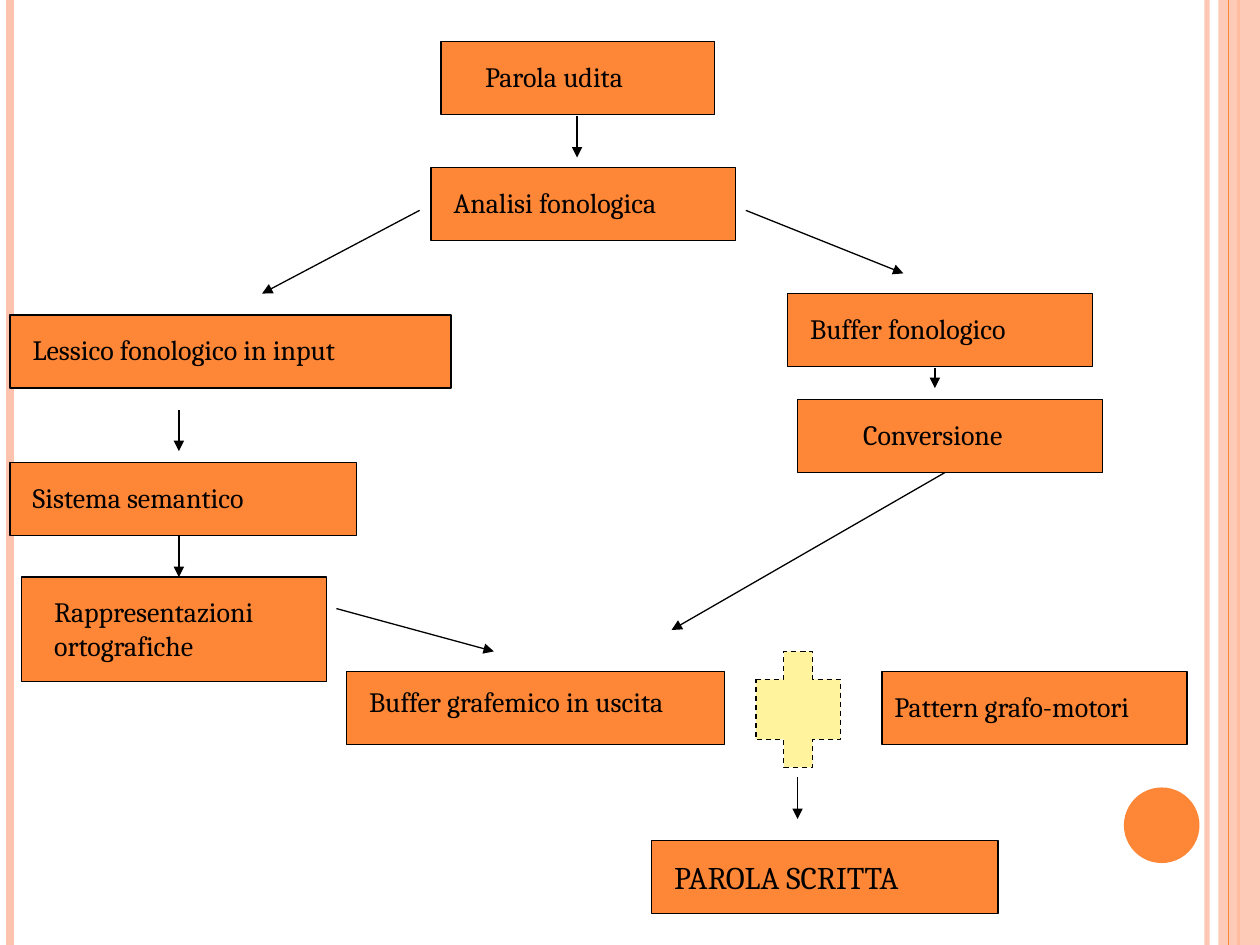
"""Build a flow chart of the steps from a heard word to a written word."""
from typing import NamedTuple

from lxml import etree
from pptx import Presentation
from pptx.dml.color import RGBColor
from pptx.enum.dml import MSO_LINE
from pptx.enum.shapes import MSO_CONNECTOR, MSO_SHAPE
from pptx.enum.text import MSO_ANCHOR, PP_ALIGN
from pptx.oxml.ns import qn
from pptx.util import Inches, Pt

RECTANGLE, OVAL, CROSS = MSO_SHAPE.RECTANGLE, MSO_SHAPE.OVAL, MSO_SHAPE.CROSS
STRAIGHT, DASH = MSO_CONNECTOR.STRAIGHT, MSO_LINE.DASH
TOP, LEFT = MSO_ANCHOR.TOP, PP_ALIGN.LEFT
ORANGE, PEACH, YELLOW, BLACK = "FE8637", "FEC3AE", "FFF39D", "000000"
FONT = "Cambria"
SLIDE_WIDTH, SLIDE_HEIGHT = 10, 7.5
STEP_HEIGHT = 0.58


class Step(NamedTuple):
    text: str
    left: float
    top: float
    width: float = 2.42
    height: float = STEP_HEIGHT
    indent: float = 0.18
    inset_top: float = 0.14
    size: int = 16


class Arrow(NamedTuple):
    start: tuple[float, float]
    end: tuple[float, float]


class Stripe(NamedTuple):
    x: float
    color: str
    weight: float
    opacity: int = 100


STEPS = [
    Step("Parola udita", 3.5, 0.33, width=2.17, indent=0.35),
    Step("Analisi fonologica", 3.42, 1.33),
    Step("Buffer fonologico", 6.25, 2.33),
    Step("Conversione", 6.33, 3.17, indent=0.52),
    Step("Buffer grafemico in uscita", 2.75, 5.33, width=3, inset_top=0.1),
    Step("PAROLA SCRITTA", 5.17, 6.67, width=2.75, size=18),
    Step("Lessico fonologico in input", 0.08, 2.5, width=3.5),
    Step("Sistema semantico", 0.08, 3.67, width=2.75),
    Step("Rappresentazioni ortografiche", 0.17, 4.58, height=0.83, indent=0.26),
    Step("Pattern grafo-motori", 7, 5.33, indent=0.1),
]
ARROWS = [
    Arrow((4.58, 0.92), (4.58, 1.25)),
    Arrow((5.92, 1.67), (7.17, 2.17)),
    Arrow((7.42, 2.92), (7.42, 3.08)),
    Arrow((7.5, 3.75), (5.33, 5)),
    Arrow((6.33, 6.17), (6.33, 6.5)),
    Arrow((3.33, 1.67), (2.08, 2.33)),
    Arrow((1.42, 3.25), (1.42, 3.58)),
    Arrow((1.42, 4.25), (1.42, 4.58)),
    Arrow((2.67, 4.83), (3.92, 5.17)),
]
OUTER_STRIPES = [
    Stripe(9.58, PEACH, 3, opacity=93),
    Stripe(0.08, PEACH, 4.5),
    Stripe(9.83, ORANGE, 1.5),
]
INNER_STRIPE = Stripe(9.75, ORANGE, 0.75)


def paint(color_format, color: str, opacity: int = 100) -> None:
    """Set a colour, and its opacity in percent when it is not full."""
    color_format.rgb = RGBColor.from_string(color)
    if opacity < 100:
        for element in color_format._xFill.iter(qn("a:srgbClr")):
            etree.SubElement(element, qn("a:alpha"), val=str(opacity * 1000))


def add_box(page, kind, left: float, top: float, width: float, height: float,
            fill: str, opacity: int = 100, outline: str | None = None):
    """Add a filled shape without a shadow, outlined on request."""
    box = page.shapes.add_shape(
        kind, Inches(left), Inches(top), Inches(width), Inches(height))
    box.shadow.inherit = False
    box.fill.solid()
    paint(box.fill.fore_color, fill, opacity)
    if outline:
        paint(box.line.color, outline)
        box.line.width = Pt(0.75)
    else:
        box.line.fill.background()
    return box


def add_line(page, start: tuple[float, float], end: tuple[float, float],
             color: str = BLACK, weight: float = 0.75, opacity: int = 100,
             arrowhead: bool = False) -> None:
    """Add a straight line, with an arrowhead at its end on request."""
    line = page.shapes.add_connector(
        STRAIGHT, *(Inches(value) for value in (*start, *end)))
    paint(line.line.color, color, opacity)
    line.line.width = Pt(weight)
    if arrowhead:
        outline = line.line._get_or_add_ln()
        etree.SubElement(outline, qn("a:tailEnd"), type="triangle")
    etree.SubElement(line._element.spPr, qn("a:effectLst"))


def write_text(box, text: str, *, size: int, indent: float, inset_top: float,
               color: str = BLACK) -> None:
    """Write left-aligned text into a shape from its top."""
    frame = box.text_frame
    frame.word_wrap = True
    frame.vertical_anchor = TOP
    frame.margin_left, frame.margin_top = Inches(indent), Inches(inset_top)
    para = frame.paragraphs[0]
    para.alignment = LEFT
    span = para.add_run()
    span.text = text
    span.font.name, span.font.size = FONT, Pt(size)
    paint(span.font.color, color)


def add_stripe(page, stripe: Stripe) -> None:
    """Draw a vertical stripe over the full height of the slide."""
    add_line(page, (stripe.x, 0), (stripe.x, SLIDE_HEIGHT),
             stripe.color, stripe.weight, stripe.opacity)


def add_background(page) -> None:
    """Draw the side stripes, the right band and the disc."""
    for stripe in OUTER_STRIPES:
        add_stripe(page, stripe)
    add_box(page, RECTANGLE, 9.67, 0, 0.33, SLIDE_HEIGHT, PEACH, opacity=87)
    add_stripe(page, INNER_STRIPE)
    add_box(page, OVAL, 8.92, 6.25, 0.6, 0.6, ORANGE)


def add_step(page, step: Step) -> None:
    """Draw one labelled step of the flow chart."""
    box = add_box(page, RECTANGLE, step.left, step.top, step.width,
                  step.height, ORANGE, outline=BLACK)
    write_text(box, step.text, size=step.size, indent=step.indent,
               inset_top=step.inset_top)


def main() -> None:
    """Build and save the deck."""
    deck = Presentation()
    deck.slide_width, deck.slide_height = Inches(SLIDE_WIDTH), Inches(SLIDE_HEIGHT)
    page = deck.slides.add_slide(deck.slide_layouts.get_by_name("Blank"))
    add_background(page)
    for step in STEPS:
        add_step(page, step)
    for arrow in ARROWS:
        add_line(page, arrow.start, arrow.end, arrowhead=True)
    plus = add_box(page, CROSS, 6, 5.17, 0.67, 0.92, YELLOW, outline=BLACK)
    plus.adjustments[0] = 0.33
    plus.line.dash_style = DASH
    deck.save("out.pptx")


if __name__ == "__main__":
    main()
